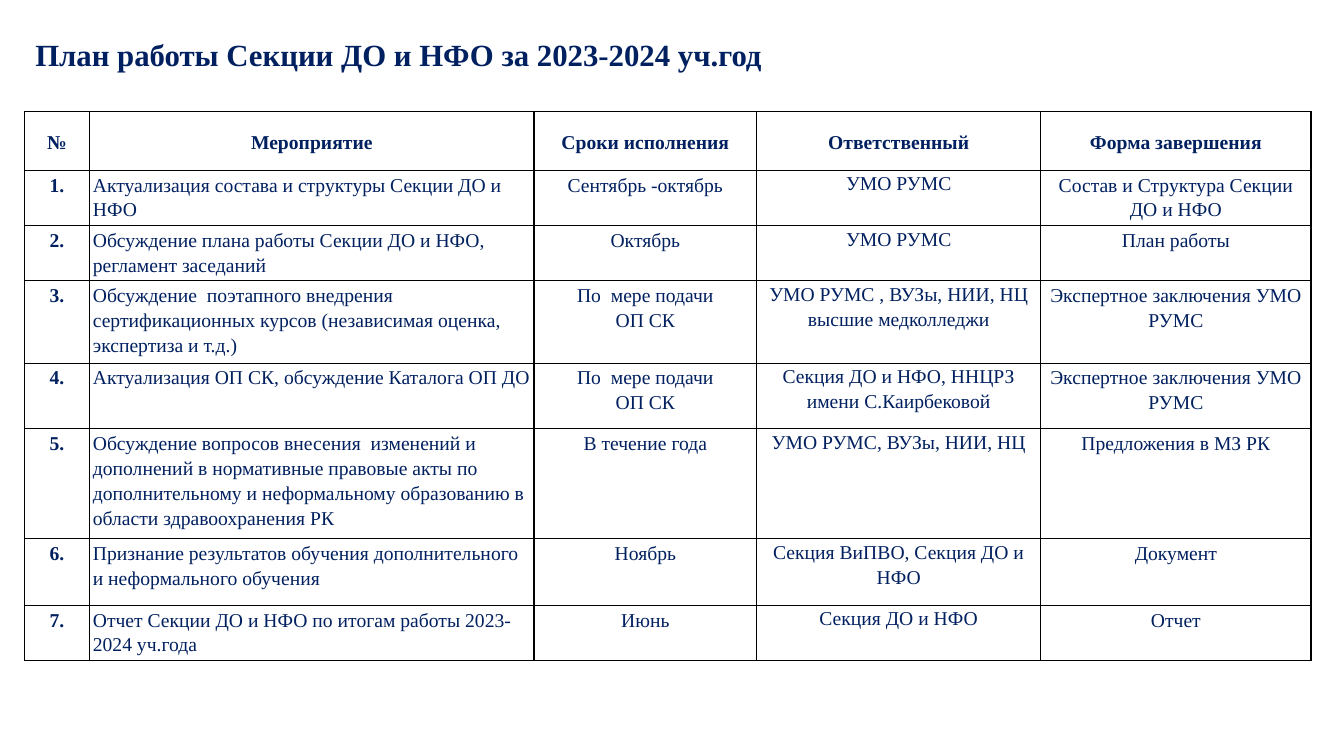
"""Build the slide with the yearly work plan of the section."""

from dataclasses import dataclass
from lxml.etree import SubElement
from pptx import Presentation
from pptx.dml.color import RGBColor
from pptx.enum.text import MSO_ANCHOR, PP_ALIGN
from pptx.oxml.ns import qn
from pptx.slide import Slide
from pptx.table import _Cell
from pptx.text.text import TextFrame
from pptx.util import Cm, Pt

NAVY = "002060"
BLACK = "000000"
WHITE = "FFFFFF"
FONT = "Times New Roman"
COLUMN_WIDTHS = [1.65, 11.2, 5.61, 7.16, 6.81]
ACTIVITY_COLUMN = 1
RESPONSIBLE_COLUMN = 3


@dataclass(frozen=True)
class PlanRow:
    height: float
    number: str
    activity: str
    timing: str
    responsible: str
    result: str

    def texts(self) -> list[str]:
        return [self.number, self.activity, self.timing, self.responsible, self.result]


PLAN = [
    PlanRow(1.48, "№", "Мероприятие", "Сроки исполнения", "Ответственный", "Форма завершения"),
    PlanRow(1.32, "1.", "Актуализация состава и структуры Секции ДО и НФО",
            "Сентябрь -октябрь", "УМО РУМС", "Состав и Структура Секции ДО и НФО"),
    PlanRow(1.32, "2.", "Обсуждение плана работы Секции ДО и НФО, регламент заседаний",
            "Октябрь", "УМО РУМС", "План работы"),
    PlanRow(2.01, "3.", "Обсуждение  поэтапного внедрения сертификационных курсов "
            "(независимая оценка, экспертиза и т.д.)",
            "По  мере подачи\nОП СК", "УМО РУМС , ВУЗы, НИИ, НЦ высшие медколледжи",
            "Экспертное заключения УМО РУМС"),
    PlanRow(1.65, "4.", "Актуализация ОП СК, обсуждение Каталога ОП ДО",
            "По  мере подачи\nОП СК", "Секция ДО и НФО, ННЦРЗ имени С.Каирбековой",
            "Экспертное заключения УМО РУМС"),
    PlanRow(2.77, "5.", "Обсуждение вопросов внесения  изменений и дополнений в нормативные "
            "правовые акты по дополнительному и неформальному образованию в области "
            "здравоохранения РК",
            "В течение года", "УМО РУМС, ВУЗы, НИИ, НЦ", "Предложения в МЗ РК"),
    PlanRow(1.68, "6.", "Признание результатов обучения дополнительного  и неформального обучения",
            "Ноябрь", "Секция ВиПВО, Секция ДО и НФО", "Документ"),
    PlanRow(1.32, "7.", "Отчет Секции ДО и НФО по итогам работы 2023-2024 уч.года",
            "Июнь", "Секция ДО и НФО", "Отчет"),
]


def color(value: str) -> RGBColor:
    return RGBColor.from_string(value)


def write_text(frame: TextFrame, text: str, size: int, bold: bool,
               alignment: PP_ALIGN, line_spacing: float) -> None:
    for index, line in enumerate(text.split("\n")):
        para = frame.add_paragraph() if index else frame.paragraphs[0]
        para.alignment = alignment
        para.line_spacing = line_spacing
        span = para.add_run()
        span.text = line
        span.font.name = FONT
        span.font.size = Pt(size)
        span.font.bold = bold
        span.font.color.rgb = color(NAVY)


def style_cell(cell: _Cell, inset: float, top: float) -> None:
    cell.margin_left = cell.margin_right = Cm(inset)
    cell.margin_top = Cm(top)
    cell.margin_bottom = Cm(0)
    properties = cell._tc.get_or_add_tcPr()
    for side in ("a:lnL", "a:lnR", "a:lnT", "a:lnB"):
        border = SubElement(properties, qn(side), w=str(Pt(1)))
        fill = SubElement(border, qn("a:solidFill"))
        SubElement(fill, qn("a:srgbClr"), val=BLACK)
    cell.fill.solid()
    cell.fill.fore_color.rgb = color(WHITE)


def add_title(page: Slide) -> None:
    box = page.shapes.add_textbox(Cm(0.64), Cm(0.71), Cm(29.21), Cm(1.42))
    frame = box.text_frame
    frame.word_wrap = True
    frame.vertical_anchor = MSO_ANCHOR.MIDDLE
    write_text(frame, "План работы Секции ДО и НФО за 2023-2024 уч.год",
               22, True, PP_ALIGN.LEFT, 0.9)


def add_plan(page: Slide) -> None:
    width = Cm(sum(COLUMN_WIDTHS))
    height = Cm(sum(row.height for row in PLAN))
    table = page.shapes.add_table(
        len(PLAN), len(COLUMN_WIDTHS), Cm(0.61), Cm(2.81), width, height).table
    table.first_row = False
    table.horz_banding = False
    for column, column_width in zip(table.columns, COLUMN_WIDTHS):
        column.width = Cm(column_width)
    for row_index, row in enumerate(PLAN):
        table.rows[row_index].height = Cm(row.height)
        is_header = row_index == 0
        for column_index, text in enumerate(row.texts()):
            cell = table.cell(row_index, column_index)
            is_flush = column_index == RESPONSIBLE_COLUMN
            style_cell(cell, 0 if is_flush else 0.08, 0 if is_flush else 0.03)
            cell.vertical_anchor = MSO_ANCHOR.MIDDLE if is_header else MSO_ANCHOR.TOP
            is_left = column_index == ACTIVITY_COLUMN and not is_header
            write_text(cell.text_frame, text, 14, is_header or column_index == 0,
                       PP_ALIGN.LEFT if is_left else PP_ALIGN.CENTER, 1.15)


def main() -> None:
    deck = Presentation()
    deck.slide_width = Cm(33.87)
    deck.slide_height = Cm(19.05)
    page = deck.slides.add_slide(deck.slide_layouts[6])
    add_title(page)
    add_plan(page)
    deck.save("out.pptx")


if __name__ == "__main__":
    main()
